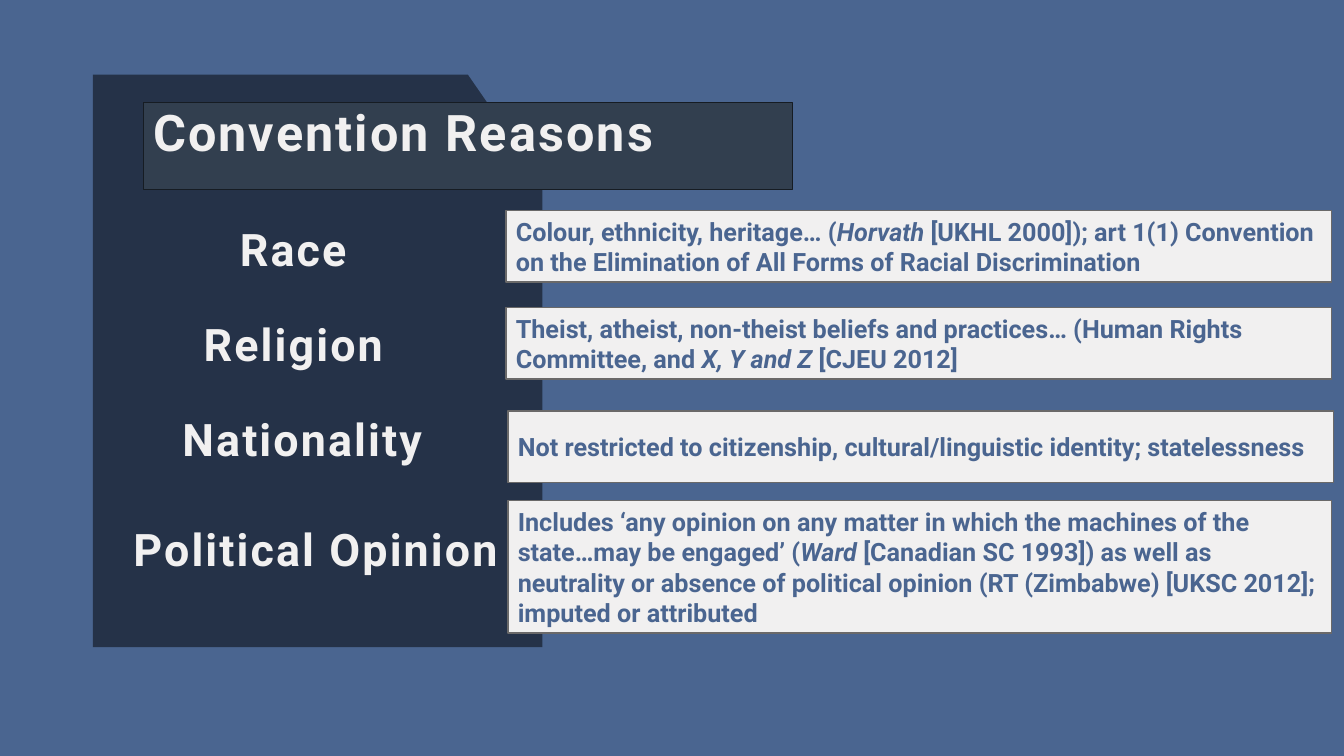
"""Builds the slide on the Convention reasons for persecution."""
from dataclasses import dataclass

from pptx import Presentation
from pptx.dml.color import RGBColor
from pptx.enum.shapes import MSO_SHAPE
from pptx.enum.text import MSO_ANCHOR, MSO_AUTO_SIZE, PP_ALIGN
from pptx.shapes.autoshape import Shape
from pptx.slide import Slide
from pptx.util import Cm, Pt

COLORS = {
    "background": "4A6590",
    "panel": "253248",
    "title_fill": "323F4F",
    "title_line": "161C23",
    "light": "F1F0F0",
    "box_line": "6A6969",
}
FONT = "Roboto"


@dataclass(frozen=True)
class Box:
    left: float
    top: float
    width: float
    height: float

    def lengths(self) -> tuple[Cm, Cm, Cm, Cm]:
        return Cm(self.left), Cm(self.top), Cm(self.width), Cm(self.height)


@dataclass(frozen=True)
class Reason:
    name: str
    name_box: Box
    detail_box: Box
    before: str
    case: str = ""
    after: str = ""
    align: PP_ALIGN = PP_ALIGN.CENTER


TITLE_BOX = Box(3.61, 2.59, 16.36, 2.18)
PANEL_POINTS = [(2.34, 1.88), (11.79, 1.88), (13.67, 4.6), (13.67, 16.31), (2.34, 16.31)]
REASONS = [
    Reason(
        "Race", Box(3.25, 5.56, 8.28, 1.57), Box(12.75, 5.31, 20.8, 1.8),
        "Colour, ethnicity, heritage… (", "Horvath ",
        "[UKHL 2000]); art 1(1) Convention on the Elimination of All Forms of Racial Discrimination",
    ),
    Reason(
        "Religion", Box(2.67, 7.95, 9.45, 1.57), Box(12.75, 7.75, 20.8, 1.8),
        "Theist, atheist, non-theist beliefs and practices… (Human Rights Committee, and ",
        "X, Y and Z ", "[CJEU 2012]",
    ),
    Reason(
        "Nationality", Box(3.48, 10.34, 8.28, 1.6), Box(12.8, 10.36, 20.8, 1.8),
        "Not restricted to citizenship, cultural/linguistic identity; statelessness",
    ),
    Reason(
        "Political Opinion", Box(2.44, 12.7, 10.36, 2.44), Box(12.8, 12.62, 20.75, 3.33),
        "Includes ‘any opinion on any matter in which the machines of the state…may be engaged’ (",
        "Ward ",
        "[Canadian SC 1993]) as well as neutrality or absence of political opinion "
        "(RT (Zimbabwe) [UKSC 2012]; imputed or attributed",
        PP_ALIGN.RIGHT,
    ),
]


def color(name: str) -> RGBColor:
    return RGBColor.from_string(COLORS[name])


def add_panel(slide: Slide) -> None:
    points = [(Cm(x), Cm(y)) for x, y in PANEL_POINTS]
    builder = slide.shapes.build_freeform(*points[0], scale=1.0)
    builder.add_line_segments(points[1:], close=True)
    panel = builder.convert_to_shape()
    panel.shadow.inherit = False
    panel.fill.solid()
    panel.fill.fore_color.rgb = color("panel")
    panel.line.fill.background()


def add_rectangle(slide: Slide, box: Box, fill: str, line: str) -> Shape:
    rectangle = slide.shapes.add_shape(MSO_SHAPE.RECTANGLE, *box.lengths())
    rectangle.shadow.inherit = False
    rectangle.fill.solid()
    rectangle.fill.fore_color.rgb = color(fill)
    rectangle.line.color.rgb = color(line)
    rectangle.line.width = Pt(1)
    return rectangle


def write_heading(shape: Shape, text: str, size: int, align: PP_ALIGN, anchor: MSO_ANCHOR) -> None:
    text_frame = shape.text_frame
    text_frame.text = text
    text_frame.word_wrap = True
    text_frame.vertical_anchor = anchor
    paragraph = text_frame.paragraphs[0]
    paragraph.alignment = align
    paragraph.line_spacing = 0.9
    run = paragraph.runs[0]
    run.font.name = FONT
    run.font.size = Pt(size)
    run.font.bold = True
    run.font.color.rgb = color("light")
    run._r.get_or_add_rPr().set("spc", "150")


def write_detail(shape: Shape, reason: Reason) -> None:
    text_frame = shape.text_frame
    text_frame.word_wrap = True
    text_frame.auto_size = MSO_AUTO_SIZE.SHAPE_TO_FIT_TEXT
    text_frame.vertical_anchor = MSO_ANCHOR.MIDDLE
    paragraph = text_frame.paragraphs[0]
    paragraph.alignment = PP_ALIGN.LEFT
    for text in filter(None, (reason.before, reason.case, reason.after)):
        run = paragraph.add_run()
        run.text = text
        run.font.name = FONT
        run.font.size = Pt(18)
        run.font.bold = True
        run.font.italic = text == reason.case
        run.font.color.rgb = color("background")


def add_reason(slide: Slide, reason: Reason) -> None:
    name_shape = slide.shapes.add_textbox(*reason.name_box.lengths())
    write_heading(name_shape, reason.name, 32, reason.align, MSO_ANCHOR.MIDDLE)
    detail_shape = add_rectangle(slide, reason.detail_box, "light", "box_line")
    write_detail(detail_shape, reason)


def main() -> None:
    presentation = Presentation()
    presentation.slide_width = Cm(33.87)
    presentation.slide_height = Cm(19.05)
    slide = presentation.slides.add_slide(presentation.slide_layouts[6])
    slide.background.fill.solid()
    slide.background.fill.fore_color.rgb = color("background")
    add_panel(slide)
    title = add_rectangle(slide, TITLE_BOX, "title_fill", "title_line")
    write_heading(title, "Convention Reasons", 36, PP_ALIGN.LEFT, MSO_ANCHOR.TOP)
    for reason in REASONS:
        add_reason(slide, reason)
    presentation.save("out.pptx")


if __name__ == "__main__":
    main()
